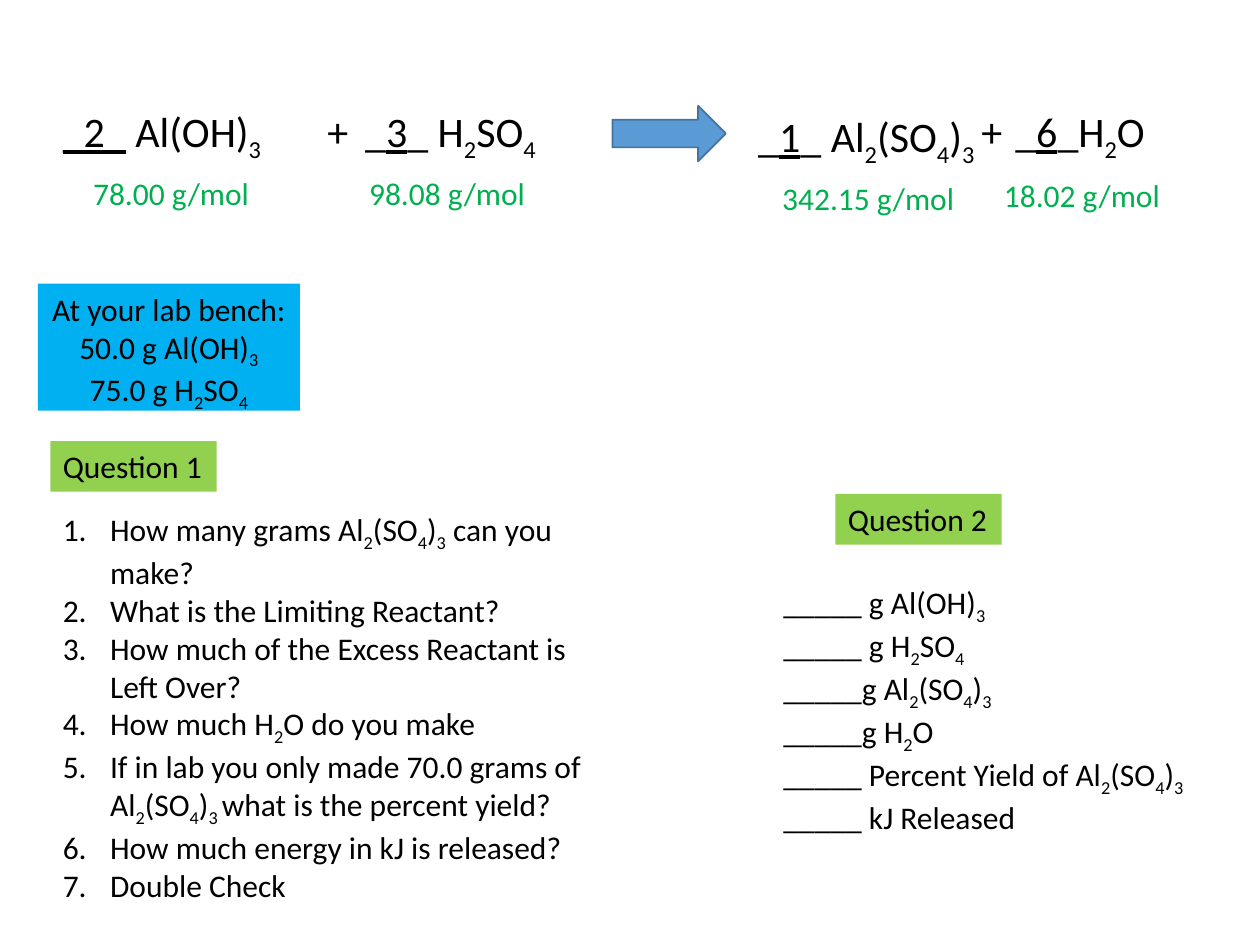
from lxml import etree
from pptx import Presentation
from pptx.dml.color import RGBColor
from pptx.enum import shapes, text
from pptx.oxml.ns import qn
from pptx.util import Pt

BLACK = RGBColor(0x00, 0x00, 0x00)
MASS_GREEN = RGBColor(0x00, 0xB0, 0x50)
LABEL_GREEN = RGBColor(0x92, 0xD0, 0x50)
BENCH_BLUE = RGBColor(0x00, 0xB0, 0xF0)
ARROW_FILL = RGBColor(0x5B, 0x9B, 0xD5)
ARROW_LINE = RGBColor(0x43, 0x73, 0x9E)

# Pieces are split by "|"; "~" marks a subscript and "*" an underlined piece
HYDROXIDE = "Al(OH)|~3"
ACID = "H|~2|SO|~4"
SULFATE = "Al|~2|(SO|~4|)|~3"
WATER = "H|~2|O"

# Left, top, width, height and wording of each part of the equation
EQUATION = [
    (28.8, 57, 139.7, 36, "*_2_| " + HYDROXIDE),
    (180, 57, 26.6, 36, "+"),
    (201.6, 57, 115.2, 36, "_|*3|_ " + ACID),
    (426.2, 59.8, 146.2, 36, "_|*1|_ " + SULFATE),
    (553.7, 57, 26.6, 36, "+"),
    (573.1, 57, 90.7, 36, "_|*6|_" + WATER),
]
MOLAR_MASSES = [
    (46.1, 95.8, 104.4, 29, "78.00 g/mol"),
    (203.8, 95.8, 104.4, 29, "98.08 g/mol"),
    (439.9, 98.6, 113.8, 29, "342.15 g/mol"),
    (566.6, 97.2, 104.4, 29, "18.02 g/mol"),
]
QUESTION_LABELS = [
    (28.8, 252, 95, 29, "Question 1"),
    (477.4, 282.2, 95, 29, "Question 2"),
]
BENCH = ["At your lab bench:", "50.0 g " + HYDROXIDE, "75.0 g " + ACID]
QUESTIONS = [
    "How many grams " + SULFATE + "| can you make?",
    "What is the Limiting Reactant?",
    "How much of the Excess Reactant is Left Over?",
    "How much " + WATER + " do you make",
    "If in lab you only made 70.0 grams of " + SULFATE
    + " |what is the percent yield?",
    "How much energy in kJ is released?",
    "Double Check",
]
ANSWERS = [
    "_____ g " + HYDROXIDE,
    "_____ g " + ACID,
    "_____g " + SULFATE,
    "_____g " + WATER,
    "_____ Percent Yield of " + SULFATE,
    "_____ kJ Released",
]


def add_pieces(p, line, size, color):
    for piece in line.split("|"):
        r = p.add_run()
        r.text = piece.lstrip("~*")
        r.font.name = "Calibri"
        r.font.size = Pt(size)
        r.font.color.rgb = color
        if piece.startswith("~"):
            r.font._element.set("baseline", "-25000")
        elif piece.startswith("*"):
            r.font.underline = True


def number_paragraph(p, indent=27):
    pPr = p._p.get_or_add_pPr()
    pPr.set("marL", str(Pt(indent)))
    pPr.set("indent", str(-Pt(indent)))
    etree.SubElement(pPr, qn("a:buFont"), typeface="+mj-lt")
    etree.SubElement(pPr, qn("a:buAutoNum"), type="arabicPeriod")


def add_text(parent, box, lines, size=18, color=BLACK, fill=None,
             align=None, wrap=False, numbered=False):
    sp = parent.add_textbox(*map(Pt, box))
    if fill is not None:
        sp.fill.solid()
        sp.fill.fore_color.rgb = fill
    tf = sp.text_frame
    tf.word_wrap = wrap
    tf.auto_size = text.MSO_AUTO_SIZE.SHAPE_TO_FIT_TEXT
    for i, line in enumerate(lines):
        p = tf.add_paragraph() if i else tf.paragraphs[0]
        p.alignment = align
        if numbered:
            number_paragraph(p)
        add_pieces(p, line, size, color)
    return sp


def add_arrow(parent, box):
    sp = parent.add_shape(shapes.MSO_SHAPE.RIGHT_ARROW, *map(Pt, box))
    sp.shadow.inherit = False
    sp.fill.solid()
    sp.fill.fore_color.rgb = ARROW_FILL
    sp.line.color.rgb = ARROW_LINE
    sp.line.width = Pt(1)


def main():
    prs = Presentation()
    prs.slide_width, prs.slide_height = Pt(720), Pt(540)
    s = prs.slides.add_slide(prs.slide_layouts[6])

    # Balanced equation, kept together as a group
    equation = s.shapes.add_group_shape().shapes
    for *box, term in EQUATION:
        add_text(equation, box, [term], size=24)
    add_arrow(equation, (350, 60.5, 64.8, 31.7))

    # Molar masses under the compounds
    for *box, mass in MOLAR_MASSES:
        add_text(s.shapes, box, [mass], color=MASS_GREEN)

    # Amounts at the lab bench
    add_text(s.shapes, (21.6, 162, 149.8, 72.7), BENCH, fill=BENCH_BLUE,
             align=text.PP_ALIGN.CENTER)

    # Questions and answer blanks
    add_text(s.shapes, (28.8, 288, 322.6, 225.4), QUESTIONS, wrap=True,
             numbered=True)
    add_text(s.shapes, (440.6, 329.8, 248.4, 138.2), ANSWERS)
    for *box, label in QUESTION_LABELS:
        add_text(s.shapes, box, [label], fill=LABEL_GREEN)

    prs.save("out.pptx")


if __name__ == "__main__":
    main()
